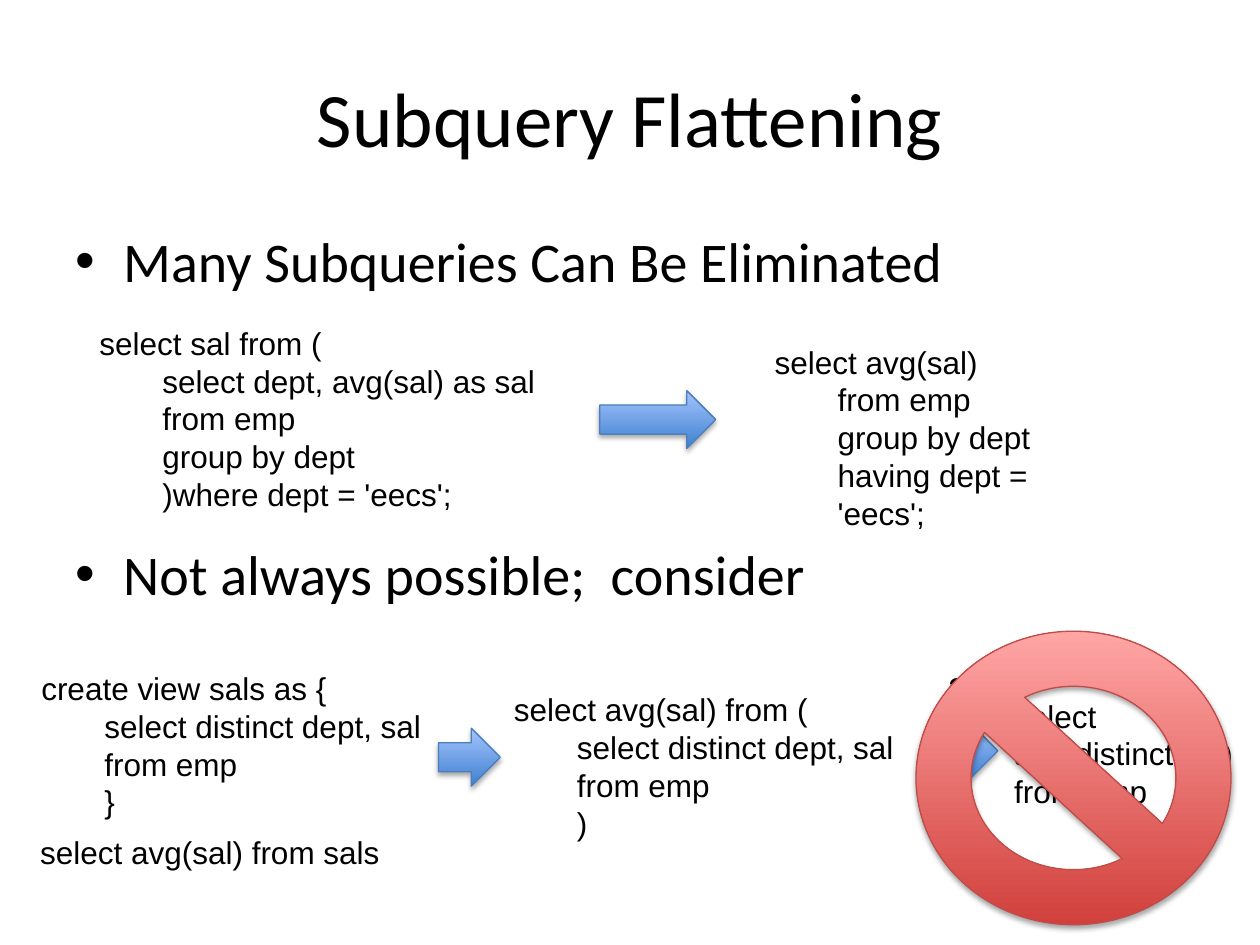
from lxml.etree import SubElement
from pptx import Presentation
from pptx.dml.color import RGBColor
from pptx.enum.shapes import MSO_SHAPE as Shape
from pptx.enum.text import MSO_ANCHOR as Anchor, MSO_AUTO_SIZE as AutoSize, PP_ALIGN as Align
from pptx.oxml.ns import qn
from pptx.util import Inches, Pt

COLORS = {
    "text": "000000",
    "blue_dark": "3F80CE", "blue_light": "A4C4FF", "blue_line": "4B7EBC",
    "red_dark": "D1403C", "red_light": "FFA6A5", "red_line": "BF4C48",
}
CELL = Inches(0.1)


def color(name):
    return RGBColor.from_string(COLORS[name])


def span(*cells):
    return [round(cell * CELL) for cell in cells]


def within(region, left, top, width, height):
    return region[0] + left, region[1] + top, width, height


def add_text(slide, box, lines, size, font):
    frame = slide.shapes.add_textbox(*span(*box)).text_frame
    frame.word_wrap = True
    for number, line in enumerate(lines):
        paragraph = frame.add_paragraph() if number else frame.paragraphs[0]
        run = paragraph.add_run()
        run.text = line
        run.font.size = Pt(size)
        run.font.name = font
        run.font.color.rgb = color("text")
    return frame


def add_query(slide, box, *lines):
    frame = add_text(slide, box, lines, 18, "Arial")
    frame.auto_size = AutoSize.SHAPE_TO_FIT_TEXT
    for clause in frame.paragraphs[1:]:
        clause.level = 1
        properties = clause._p.get_or_add_pPr()
        properties.set("marL", str(Inches(0.5)))
        properties.set("indent", "0")


def add_glossy(slide, preset, box, hue):
    symbol = slide.shapes.add_shape(preset, *span(*box))
    symbol.fill.gradient()
    symbol.fill.gradient_angle = 90
    for stop, shade in zip(symbol.fill.gradient_stops, ("dark", "light")):
        stop.color.rgb = color(f"{hue}_{shade}")
    symbol.line.color.rgb = color(f"{hue}_line")
    symbol.line.width = Pt(0.75)
    symbol.shadow.inherit = False
    effects = symbol._element.spPr.find(qn("a:effectLst"))
    shadow = SubElement(effects, qn("a:outerShdw"), blurRad=str(Pt(3.1)),
                        dist=str(Pt(1.8)), dir="5400000", rotWithShape="0")
    black = SubElement(shadow, qn("a:srgbClr"), val=COLORS["text"])
    SubElement(black, qn("a:alpha"), val="35000")


def add_title(slide, box):
    frame = add_text(slide, box, ["Subquery Flattening"], 44, "Calibri")
    frame.vertical_anchor = Anchor.MIDDLE
    frame.paragraphs[0].alignment = Align.CENTER


def add_points(slide, box):
    points = ["Many Subqueries Can Be Eliminated", "Not always possible;  consider"]
    frame = add_text(slide, box, points, 32, "Calibri")
    for paragraph, gap in zip(frame.paragraphs, (6, 140.4)):
        paragraph.space_before = Pt(gap)
        properties = paragraph._p.get_or_add_pPr()
        properties.set("marL", str(Inches(0.38)))
        properties.set("indent", str(Inches(-0.38)))
        SubElement(properties, qn("a:buFont"), typeface="Arial")
        SubElement(properties, qn("a:buChar"), char="•")


def add_flattened_example(slide, region):
    add_query(slide, within(region, 0, 0, 36.9, 16.2),
              "select sal from (", "select dept, avg(sal) as sal",
              "from emp", "group by dept", ")where dept = 'eecs';")
    add_query(slide, within(region, 53.6, 1.5, 24.9, 16.2),
              "select avg(sal)", "from emp", "group by dept", "having dept = 'eecs';")
    add_glossy(slide, Shape.RIGHT_ARROW, within(region, 40.7, 5.8, 9.2, 4.6), "blue")


def add_impossible_example(slide, region):
    add_query(slide, within(region, 0.1, 2.5, 50, 13.1),
              "create view sals as {", "select distinct dept, sal", "from emp", "}")
    add_query(slide, within(region, 0, 15.5, 29.2, 4), "select avg(sal) from sals")
    add_query(slide, within(region, 37.6, 4.2, 50, 13.1),
              "select avg(sal) from (", "select distinct dept, sal", "from emp", ")")
    add_query(slide, within(region, 77.3, 4.7, 20.5, 10.1),
              "select avg(distinct sal) from emp")
    for left, top in ((32.6, 7.7), (72.1, 7.2)):
        add_glossy(slide, Shape.RIGHT_ARROW, within(region, left, top, 4.9, 4.6), "blue")
    add_query(slide, within(region, 72.1, 2.5, 4.7, 4), "?")
    add_glossy(slide, Shape.NO_SYMBOL, within(region, 70.5, 0, 25, 23.3), "red")


def main():
    deck = Presentation()
    deck.slide_width, deck.slide_height = span(100, 75)
    slide = deck.slides.add_slide(deck.slide_layouts[6])
    add_title(slide, (5, 3, 90, 12.5))
    add_points(slide, (5, 17.5, 90, 49.5))
    add_flattened_example(slide, (6.9, 25.2))
    add_impossible_example(slide, (2.2, 50.1))
    deck.save("out.pptx")


if __name__ == "__main__":
    main()
